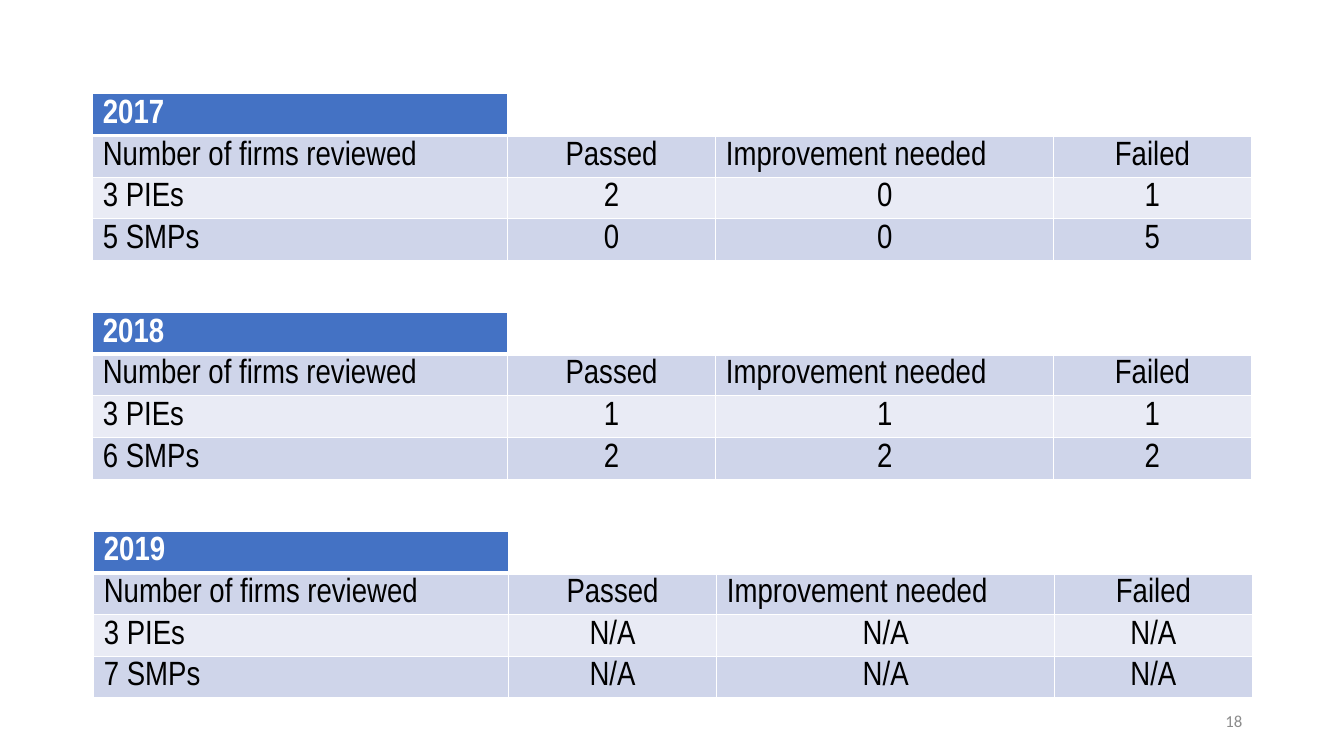
from pptx import Presentation
from pptx.util import Inches as In, Pt
from pptx.dml.color import RGBColor as RGB
from pptx.enum.text import PP_ALIGN as Align, MSO_ANCHOR as Anchor
from pptx.oxml import parse_xml
from pptx.oxml.ns import nsdecls

theme = {
    "head": "4472C4", "dark": "CFD5EA", "light": "E9EBF5",
    "white": "FFFFFF", "ink": "000000", "grey": "8C8C8C",
    "font": "Arial Narrow", "size": 24, "foot": "Calibri", "small": 12,
}

# Grid: three tables at an equal step
left, top, step = 0.92, 0.93, 2.17
cols = [4.11, 2.07, 3.35, 1.96]
high = 0.41
labels = ["Number of firms reviewed", "Passed", "Improvement needed", "Failed"]
years = [
    ("2017", left, ["3 PIEs", "2", "0", "1"], ["5 SMPs", "0", "0", "5"]),
    ("2018", left, ["3 PIEs", "1", "1", "1"], ["6 SMPs", "2", "2", "2"]),
    ("2019", left + 0.01, ["3 PIEs"] + ["N/A"] * 3, ["7 SMPs"] + ["N/A"] * 3),
]


def style(para, font, size, tint, bold=False):
    for run in para.runs:
        run.font.name = font
        run.font.size = Pt(size)
        run.font.bold = bold
        run.font.color.rgb = RGB.from_string(tint)


def edge(cell, sides):
    props = cell._tc.get_or_add_tcPr()
    for spot, (side, width) in enumerate(sides.items()):
        props.insert(spot, parse_xml(
            f'<a:ln{side} {nsdecls("a")} w="{Pt(width)}"><a:solidFill>'
            f'<a:srgbClr val="{theme["white"]}"/></a:solidFill></a:ln{side}>'))


deck = Presentation()
deck.slide_width, deck.slide_height = In(13.33), In(7.5)
slide = deck.slides.add_slide(deck.slide_layouts[6])

# Yearly tables
for n, (year, x, pies, smps) in enumerate(years):
    rows = [[year], labels, pies, smps]
    frame = slide.shapes.add_table(len(rows), len(cols), In(x), In(top + n * step),
                                   In(sum(cols)), In(high * len(rows)))
    table = frame.table
    for col, wide in zip(table.columns, cols):
        col.width = In(wide)
    for r, row in enumerate(rows):
        table.rows[r].height = In(high)
        for c, cell in enumerate(table.rows[r].cells):
            if r == 0:
                fill = theme["white"] if c else theme["head"]
            else:
                fill = theme["dark"] if r % 2 else theme["light"]
            cell.fill.solid()
            cell.fill.fore_color.rgb = RGB.from_string(fill)
            edge(cell, {"L": 1, "R": 1, "T": 3 if r == 1 else 1, "B": 1 if r else 3})
            if c >= len(row):
                continue
            para = cell.text_frame.paragraphs[0]
            para.text = row[c]
            plain = c == 0 or row[c] == "Improvement needed"
            para.alignment = Align.LEFT if plain else Align.CENTER
            tint = theme["ink"] if r else theme["white"]
            style(para, theme["font"], theme["size"], tint, r == 0)

# Page number
box = slide.shapes.add_textbox(In(9.42), In(6.95), In(3), In(0.4))
frame = box.text_frame
frame.word_wrap = True
frame.vertical_anchor = Anchor.MIDDLE
frame.text = "18"
para = frame.paragraphs[0]
para.alignment = Align.RIGHT
style(para, theme["foot"], theme["small"], theme["grey"])

deck.save("out.pptx")
